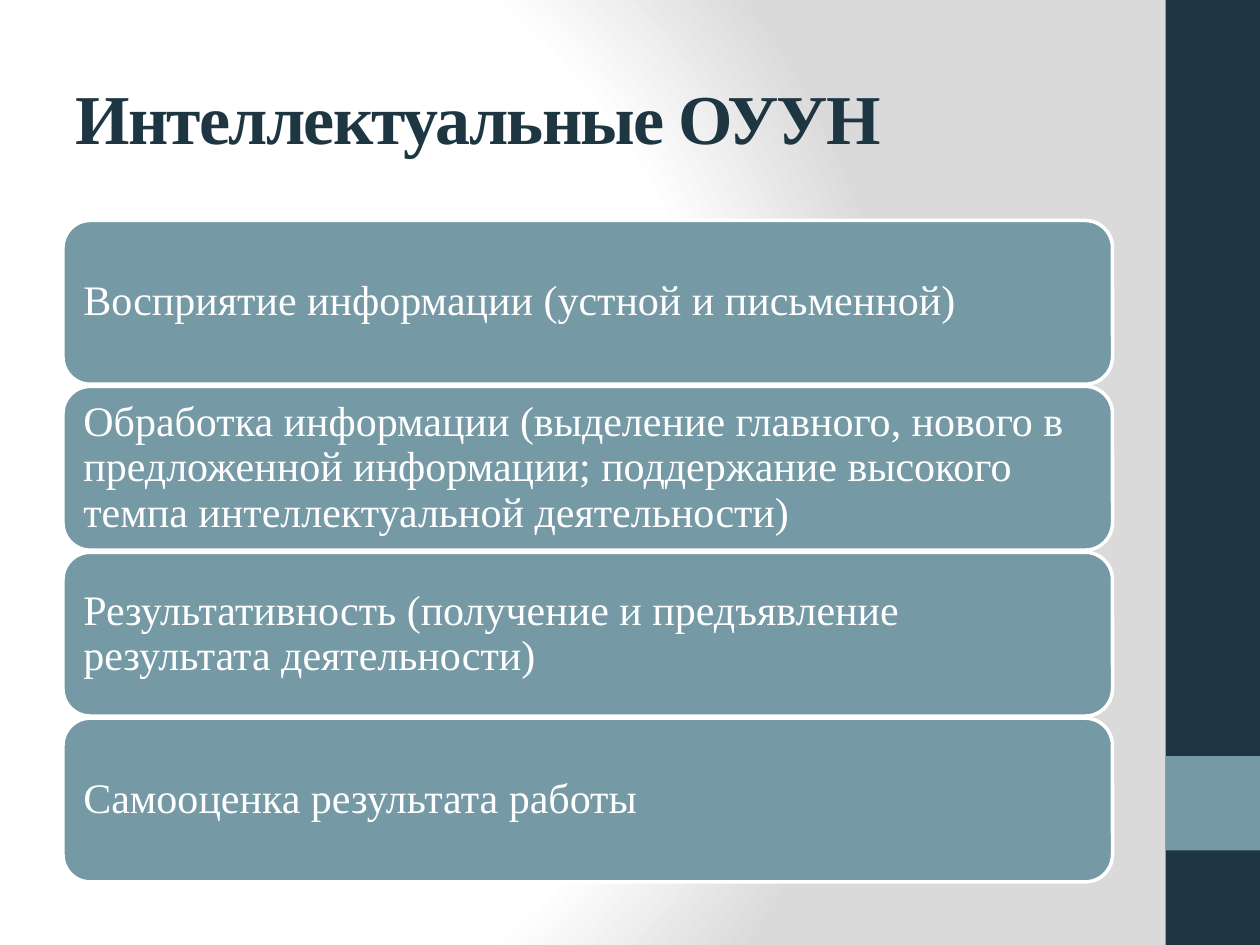
from pptx import Presentation
from pptx.dml.color import RGBColor
from pptx.enum.shapes import MSO_SHAPE as Kind
from pptx.enum.text import MSO_ANCHOR as Anchor, MSO_AUTO_SIZE as Fit, PP_ALIGN as Align
from pptx.oxml import parse_xml
from pptx.oxml.ns import nsdecls, qn
from pptx.util import Inches, Pt

TITLE = "Интеллектуальные ОУУН"
SKILLS = [
    "Восприятие информации (устной и письменной)",
    "Обработка информации (выделение главного, нового в предложенной информации; "
    "поддержание высокого темпа интеллектуальной деятельности)",
    "Результативность (получение и предъявление результата деятельности)",
    "Самооценка результата работы",
]
NAVY = RGBColor(0x1D, 0x36, 0x41)
TEAL = RGBColor(0x75, 0x9A, 0xA5)
WHITE = RGBColor(0xFF, 0xFF, 0xFF)
GREY = RGBColor(0xDA, 0xDA, 0xDA)
STOPS = [(0, WHITE), (75, WHITE), (100, GREY)]
FOCUS = {"l": 20, "t": 50, "r": 100, "b": 50}

WIDE, HIGH = 10, 7.5
BAND = 0.1 * HIGH
LEFT, SPAN = 0.5, 8.33
TOP, END, ROW = 1.75, 7, 1.3
STEP = (END - TOP - ROW) / (len(SKILLS) - 1)
BARS = [(0, HIGH, NAVY), (0.8 * HIGH, BAND, TEAL)]

HEAD = {"name": "Times New Roman", "size": Pt(40), "bold": True}
BODY = {"name": "Times New Roman", "size": Pt(24)}
FRAME = {"word_wrap": True, "auto_size": Fit.NONE, "vertical_anchor": Anchor.MIDDLE}
PADS = {"margin_" + side: Inches(0.1) for side in ("left", "right", "top", "bottom")}


def apply(item, values):
    for name, value in values.items():
        setattr(item, name, value)


def paint(slide):
    slide.background.fill.gradient()
    old = slide.element.find(".//" + qn("a:gradFill"))
    stops = "".join(
        f'<a:gs pos="{pos * 1000}"><a:srgbClr val="{tone}"/></a:gs>' for pos, tone in STOPS
    )
    rect = " ".join(f'{side}="{share * 1000}"' for side, share in FOCUS.items())
    new = parse_xml(
        f'<a:gradFill {nsdecls("a")} rotWithShape="1"><a:gsLst>{stops}</a:gsLst>'
        f'<a:path path="circle"><a:fillToRect {rect}/></a:path></a:gradFill>'
    )
    old.getparent().replace(old, new)


def block(slide, kind, box, tone):
    shape = slide.shapes.add_shape(kind, *map(Inches, box))
    shape.shadow.inherit = False
    shape.fill.solid()
    shape.fill.fore_color.rgb = tone
    shape.line.fill.background()
    return shape


def write(shape, text, font, tone):
    frame = shape.text_frame
    apply(frame, FRAME)
    para = frame.paragraphs[0]
    para.alignment = Align.LEFT
    run = para.add_run()
    run.text = text
    apply(run.font, font)
    run.font.color.rgb = tone
    return para, run


def main():
    deck = Presentation()
    apply(deck, {"slide_width": Inches(WIDE), "slide_height": Inches(HIGH)})
    slide = deck.slides.add_slide(deck.slide_layouts[5])
    paint(slide)

    for top, high, tone in BARS:
        block(slide, Kind.RECTANGLE, (WIDE - BAND, top, BAND, high), tone)

    title = slide.shapes.title
    place = zip(("left", "top", "width", "height"), map(Inches, (LEFT, 0.3, SPAN, 1.25)))
    apply(title, dict(place))
    run = write(title, TITLE, HEAD, NAVY)[1]
    run.font._element.set("spc", "-100")

    for row, skill in enumerate(SKILLS):
        card = block(slide, Kind.ROUNDED_RECTANGLE, (LEFT, TOP + row * STEP, SPAN, ROW), TEAL)
        card.line.color.rgb = WHITE
        card.line.width = Pt(2)
        apply(card.text_frame, PADS)
        para = write(card, skill, BODY, WHITE)[0]
        para.line_spacing = 0.9

    deck.save("out.pptx")


if __name__ == "__main__":
    main()
